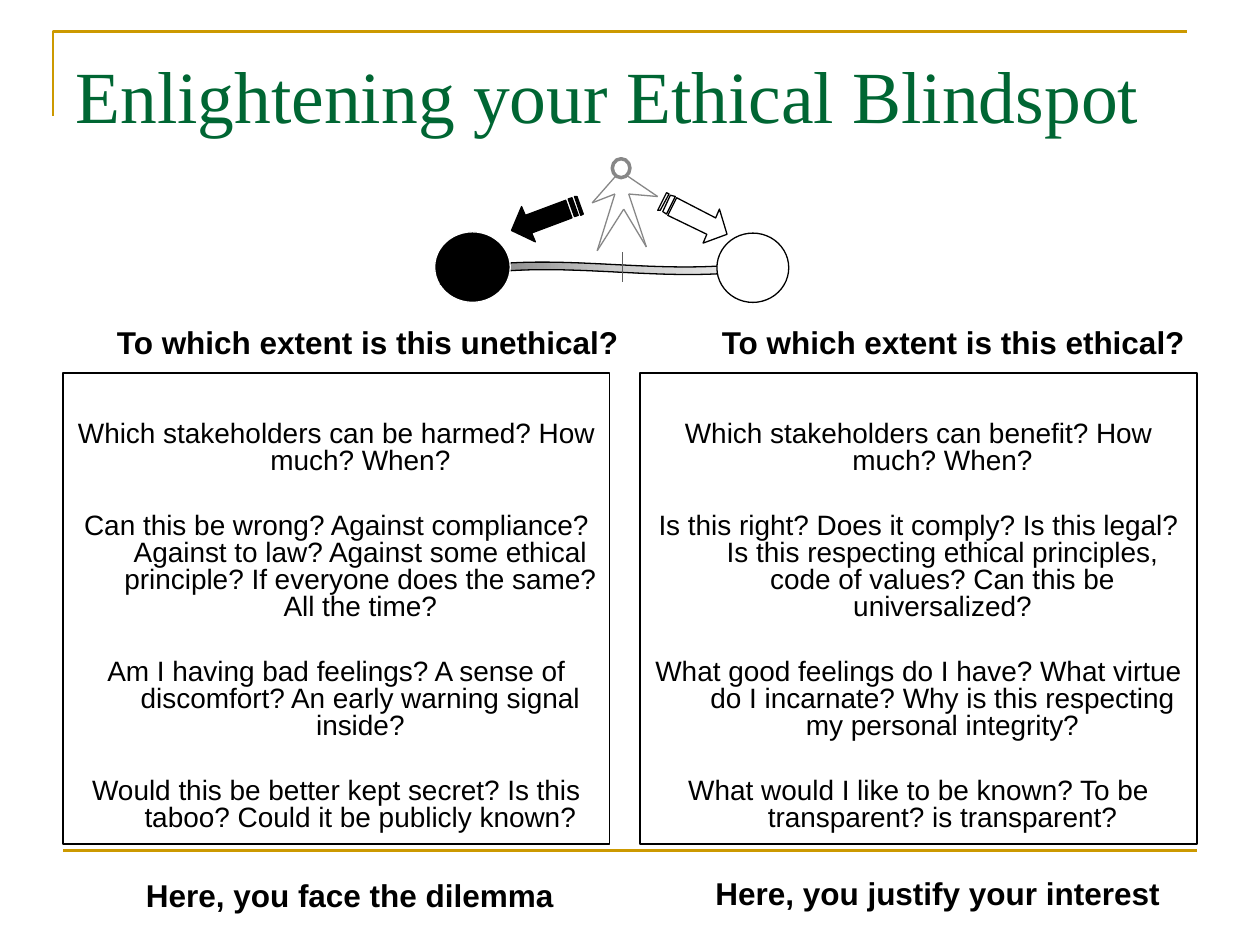
from copy import deepcopy
from itertools import pairwise

from pptx import Presentation
from pptx.dml.color import RGBColor
from pptx.enum.shapes import MSO_CONNECTOR, MSO_SHAPE as Shape
from pptx.enum.text import MSO_ANCHOR as Anchor, PP_ALIGN as Align
from pptx.oxml.ns import qn
from pptx.util import Inches, Pt

COLORS = {
    "gold": "CC9900", "green": "006633", "black": "000000", "white": "FFFFFF",
    "figure": "878787", "pivot": "5F5F5F", "silver": "CCCCCC", "pale": "E6E6E6",
}

# Outlines in hundredths of an inch
FRAME = [(42, 92), (42, 25), (942, 25)]
LEFT_ARROW = [
    [(425, 192), (422, 185), (454, 173), (449, 159), (417, 171), (414, 164), (406, 183)],
    [(459, 171), (454, 157), (451, 158), (456, 172)],
    [(463, 170), (458, 156), (456, 156), (461, 171)],
]
RIGHT_ARROW = [
    [(558, 193), (561, 186), (530, 171), (537, 157), (568, 173), (571, 166), (577, 186)],
    [(526, 168), (532, 155), (536, 156), (529, 170)],
    [(522, 167), (529, 153), (531, 154), (524, 167)],
]
# Body of the stick figure, in inches
FIGURE = [(4.92, 1.36), (4.7, 1.61), (4.88, 1.54), (4.74, 1.99), (4.95, 1.66),
          (5.13, 1.96), (4.99, 1.54), (5.22, 1.56), (4.97, 1.39)]

UNETHICAL = [
    "Which stakeholders can be harmed? How much? When?",
    "Can this be wrong? Against compliance? Against to law? Against some ethical "
    "principle? If everyone does the same? All the time?",
    "Am I having bad feelings? A sense of discomfort? An early warning signal inside?",
    "Would this be better kept secret? Is this taboo? Could it be publicly known?",
]
ETHICAL = [
    "Which stakeholders can benefit? How much? When?",
    "Is this right? Does it comply? Is this legal? Is this respecting ethical "
    "principles, code of values? Can this be universalized?",
    "What good feelings do I have? What virtue do I incarnate? Why is this "
    "respecting my personal integrity?",
    "What would I like to be known? To be transparent? is transparent?",
]


def rgb(name):
    return RGBColor.from_string(COLORS[name])


class Painter:
    body_font, title_font = "Arial", "Times New Roman"

    def __init__(self, page):
        self.page = page

    def paint(self, shape, fill=None, line=None, width=0.75):
        shape.shadow.inherit = False
        if fill:
            shape.fill.solid()
            shape.fill.fore_color.rgb = rgb(fill)
        else:
            shape.fill.background()
        if line:
            shape.line.color.rgb = rgb(line)
            shape.line.width = Pt(width)
        else:
            shape.line.fill.background()
        return shape

    def format(self, para, size, font=None, color="black", bold=False):
        for span in para.runs:
            span.font.name = font or self.body_font
            span.font.size = Pt(size)
            span.font.bold = bold
            span.font.color.rgb = rgb(color)

    def title(self, text, *place):
        box = self.page.shapes.title
        box.left, box.top, box.width, box.height = map(Inches, place)
        frame = box.text_frame
        frame.text = text
        frame.vertical_anchor = Anchor.BOTTOM
        para = frame.paragraphs[0]
        para.alignment = Align.LEFT
        self.format(para, 42, self.title_font, "green")

    def shape(self, kind, *place, **style):
        shape = self.page.shapes.add_shape(kind, *map(Inches, place))
        return self.paint(shape, **style)

    def outline(self, contours, close=True, **style):
        first, *others = contours
        builder = self.page.shapes.build_freeform(*first[0], scale=Inches(0.01))
        builder.add_line_segments(first[1:], close=close)
        for points in others:
            builder.move_to(*points[0])
            builder.add_line_segments(points[1:], close=close)
        return self.paint(builder.convert_to_shape(), **style)

    def line(self, start, end, color, width=0.75):
        line = self.page.shapes.add_connector(
            MSO_CONNECTOR.STRAIGHT, *map(Inches, (*start, *end)))
        line.line.color.rgb = rgb(color)
        line.line.width = Pt(width)
        properties = line._element.spPr
        properties.append(properties.makeelement(qn("a:effectLst"), {}))

    def label(self, text, *place, spacing=1.0, before=0):
        box = self.page.shapes.add_textbox(*map(Inches, place))
        box.text_frame.word_wrap = False
        box.text_frame.text = text
        para = box.text_frame.paragraphs[0]
        para.line_spacing = spacing
        para.space_before = Pt(before)
        self.format(para, 18, bold=True)

    def questions(self, texts, *place):
        box = self.shape(Shape.RECTANGLE, *place, line="black")
        frame = box.text_frame
        frame.word_wrap = True
        frame.vertical_anchor = Anchor.TOP
        frame.margin_top = Inches(0.39)
        frame.text = "\n".join(texts)
        for number, para in enumerate(frame.paragraphs):
            para.alignment = Align.CENTER
            para.line_spacing = 0.8
            para.space_before = Pt(22 if number else 0)
            indent = para._p.get_or_add_pPr()
            indent.set("marL", str(Inches(0.38)))
            indent.set("indent", str(-Inches(0.38)))
            self.format(para, 16)

    def beam(self, *place):
        wave = self.shape(Shape.WAVE, *place, line="black")
        wave.adjustments[0], wave.adjustments[1] = 0.206, 0.006
        wave.fill.gradient()
        wave.fill.gradient_angle = 0
        stops = wave._element.spPr.find(".//" + qn("a:gsLst"))
        stops.insert(1, deepcopy(stops[0]))
        shades = zip(wave.fill.gradient_stops, (0, 0.5, 1), ("figure", "silver", "pale"))
        for stop, position, color in shades:
            stop.position = position
            stop.color.rgb = rgb(color)


def main():
    deck = Presentation()
    deck.slide_width, deck.slide_height = Inches(10), Inches(7.5)
    painter = Painter(deck.slides.add_slide(deck.slide_layouts[5]))

    # Gold rules and title
    painter.outline([FRAME], close=False, line="gold", width=1.5)
    painter.line((0.5, 6.75), (9.5, 6.75), "gold", 1.5)
    painter.title("Enlightening your Ethical Blindspot", 0.5, 0.3, 9, 0.85)

    # Two columns of questions
    painter.questions(UNETHICAL, 0.5, 2.96, 4.34, 3.74)
    painter.questions(ETHICAL, 5.08, 2.96, 4.42, 3.74)
    heading = {"spacing": 0.8, "before": 3.6}
    painter.label("To which extent is this unethical?", 0.83, 2.57, 4.22, 0.65, **heading)
    painter.label("To which extent is this ethical?", 5.63, 2.57, 3.91, 0.65, **heading)
    painter.label("Here, you face the dilemma", 1.06, 6.9, 3.54, 0.4)
    painter.label("Here, you justify your interest", 5.58, 6.89, 3.76, 0.4)

    # Balance with its white and black weights
    painter.beam(3.89, 2.08, 1.99, 0.1)
    painter.shape(Shape.OVAL, 5.69, 1.85, 0.57, 0.55, fill="white", line="black")
    painter.shape(Shape.RECTANGLE, 5.75, 1.97, 0.44, 0.27, fill="white")
    painter.line((4.94, 2), (4.94, 2.24), "pivot", 1)
    painter.outline(LEFT_ARROW, fill="black", line="black")
    painter.outline(RIGHT_ARROW, fill="white", line="black")
    painter.shape(Shape.OVAL, 3.45, 1.84, 0.6, 0.56, fill="black", line="white")
    painter.shape(Shape.RECTANGLE, 3.49, 1.99, 0.19, 0.27, fill="black")

    # Stick figure
    for start, end in pairwise(FIGURE):
        painter.line(start, end, "figure")
    painter.shape(Shape.OVAL, 4.86, 1.26, 0.14, 0.15, fill="white", line="figure", width=2)

    deck.save("out.pptx")


if __name__ == "__main__":
    main()
